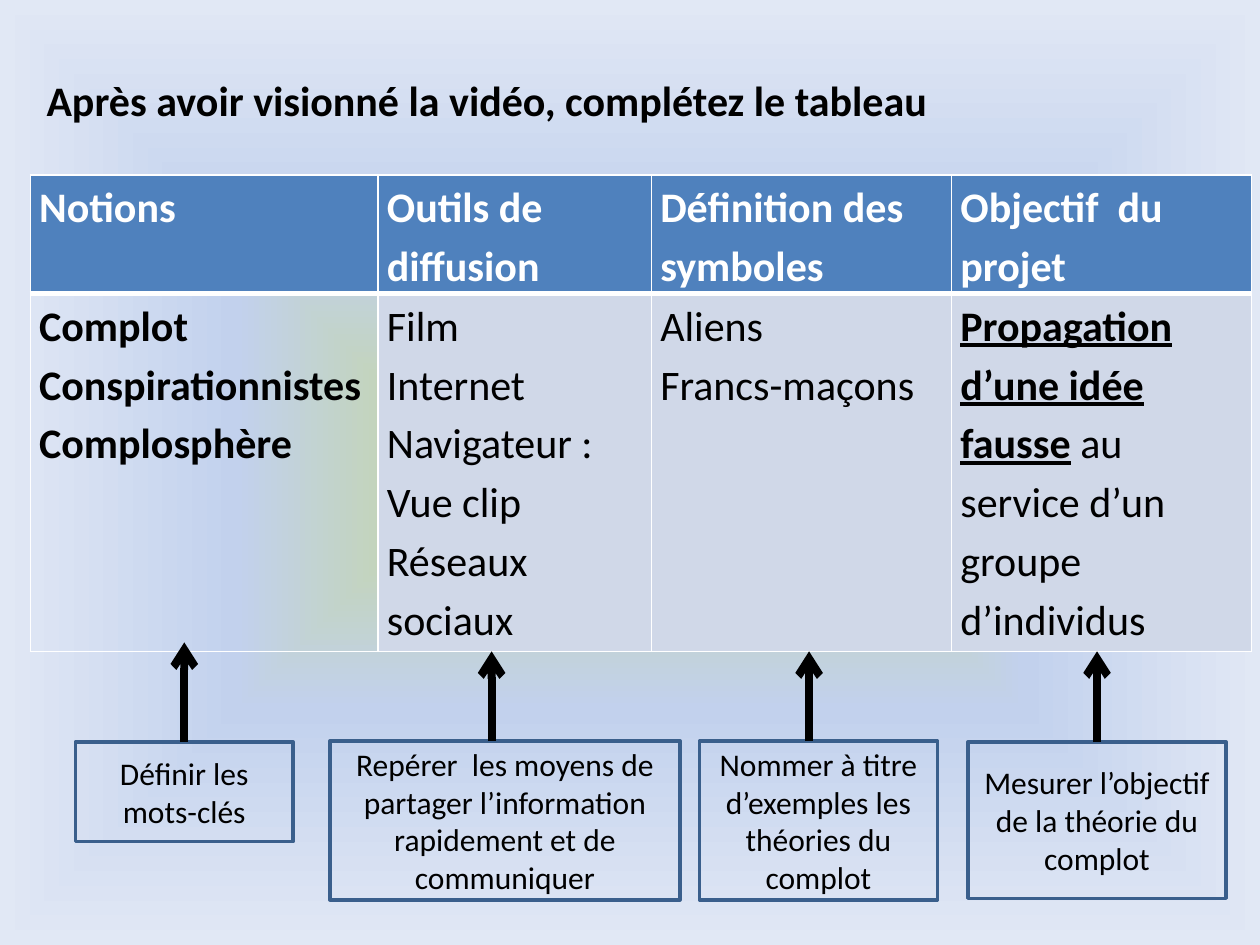
from dataclasses import dataclass
from pptx import Presentation
from pptx.dml.color import RGBColor
from pptx.enum.shapes import MSO_CONNECTOR as Link, MSO_SHAPE as Form
from pptx.enum.text import MSO_ANCHOR as Anchor, PP_ALIGN as Align
from pptx.oxml import parse_xml as build
from pptx.oxml.ns import nsdecls, qn
from pptx.util import Cm, Pt

BLACK, WHITE = "000000", "FFFFFF"
HEAD, BODY, EDGE = "4F81BD", "D0D8E8", "3A5F8C"


@dataclass
class Note:
    words: str
    left: float
    top: float
    width: float
    height: float
    tip: float
    shift: float = 0


@dataclass
class Column:
    title: str
    width: float
    lines: list[str]
    bold: bool = False
    fill: str | None = BODY
    mark: str = ""


COLUMNS = [
    Column("Notions", 7.01, ["Complot", "Conspirationnistes", "Complosphère"], bold=True, fill=None),
    Column("Outils de diffusion", 5.51, ["Film", "Internet", "Navigateur : Vue clip", "Réseaux sociaux"]),
    Column("Définition des symboles", 6.05, ["Aliens", "Francs-maçons"]),
    Column("Objectif  du projet", 6.05, [" au service d’un groupe d’individus"],
           mark="Propagation d’une idée fausse"),
]

NOTES = [
    Note("Définir les mots-clés", 1.52, 14.96, 4.39, 2.01, 12.95),
    Note("Repérer  les moyens de partager l’information rapidement et de communiquer",
         6.65, 14.94, 7.06, 3.2, 13.13, -0.27),
    Note("Nommer à titre d’exemples les théories du complot", 14.1, 14.94, 4.8, 3.2, 13.13, -0.19),
    Note("Mesurer l’objectif de la théorie du complot", 19.51, 14.96, 5.21, 3.15, 13.13),
]


def color(code: str) -> RGBColor:
    return RGBColor.from_string(code)


def write(frame, lines: list[str], *, size=24, ink=BLACK, bold=False,
          lead=None, align=None, mark="") -> None:
    frame.word_wrap = True
    for i, line in enumerate(lines):
        para = frame.paragraphs[0] if i == 0 else frame.add_paragraph()
        para.alignment, para.line_spacing = align, lead
        parts = [(line, False)]
        if mark and i == 0:
            parts.insert(0, (mark, True))
        for words, strong in parts:
            run = para.add_run()
            run.text = words
            font = run.font
            font.name, font.size, font.color.rgb = "Calibri", Pt(size), color(ink)
            font.bold, font.underline = bold or strong, strong


def backdrop(slide) -> None:
    slide.background.fill.gradient()
    old = slide.element.find(".//" + qn("a:gradFill"))
    stops = "".join(
        f'<a:gs pos="{pos * 1000}"><a:srgbClr val="{code}"/></a:gs>'
        for pos, code in ((0, "C3D69B"), (50, "C2D1ED"), (100, "E1E8F5")))
    old.getparent().replace(old, build(
        f'<a:gradFill {nsdecls("a")} rotWithShape="1"><a:gsLst>{stops}</a:gsLst>'
        '<a:path path="shape"><a:fillToRect l="50000" t="50000" r="50000" b="50000"/>'
        '</a:path></a:gradFill>'))


def border(cell, **widths: float) -> None:
    props = cell._tc.get_or_add_tcPr()
    for i, side in enumerate("LRTB"):
        props.insert(i, build(
            f'<a:ln{side} {nsdecls("a")} w="{Pt(widths.get(side, 1))}"><a:solidFill>'
            f'<a:srgbClr val="{WHITE}"/></a:solidFill></a:ln{side}>'))


def fill_cell(cell, lines: list[str], fill: str | None, **style) -> None:
    cell.margin_left = cell.margin_right = Cm(0.18)
    cell.margin_top = cell.margin_bottom = 0
    if fill:
        cell.fill.solid()
        cell.fill.fore_color.rgb = color(fill)
    else:
        cell.fill.background()
    write(cell.text_frame, lines, lead=1.15, **style)


def draw_table(slide) -> None:
    total = sum(col.width for col in COLUMNS)
    grid = slide.shapes.add_table(2, len(COLUMNS), Cm(0.61), Cm(3.53), Cm(total), Cm(9.6)).table
    grid.rows[0].height, grid.rows[1].height = Cm(2.39), Cm(7.21)
    for i, col in enumerate(COLUMNS):
        grid.columns[i].width = Cm(col.width)
        head, body = grid.cell(0, i), grid.cell(1, i)
        fill_cell(head, [col.title], HEAD, ink=WHITE, bold=True)
        fill_cell(body, col.lines, col.fill, bold=col.bold, mark=col.mark)
        border(head, B=3)
        border(body, T=3)


def draw_note(slide, note: Note) -> None:
    box = slide.shapes.add_shape(Form.RECTANGLE, Cm(note.left), Cm(note.top),
                                 Cm(note.width), Cm(note.height))
    box.shadow.inherit = False
    box.fill.background()
    box.line.color.rgb, box.line.width = color(EDGE), Pt(2)
    box.text_frame.vertical_anchor = Anchor.MIDDLE
    write(box.text_frame, [note.words], size=18, align=Align.CENTER)

    mid = Cm(note.left + note.width / 2 + note.shift)
    arrow = slide.shapes.add_connector(Link.STRAIGHT, mid, Cm(note.top), mid, Cm(note.tip))
    if not note.shift:
        arrow.begin_connect(box, 0)
    arrow.line.color.rgb, arrow.line.width = color(BLACK), Pt(4.5)
    arrow.line._get_or_add_ln().append(build(f'<a:tailEnd {nsdecls("a")} type="arrow"/>'))
    arrow._element.spPr.append(build(f'<a:effectLst {nsdecls("a")}/>'))


def main() -> None:
    deck = Presentation()
    deck.slide_width, deck.slide_height = Cm(25.4), Cm(19.05)
    slide = deck.slides.add_slide(deck.slide_layouts[6])
    backdrop(slide)
    title = slide.shapes.add_textbox(Cm(0.69), Cm(1.37), Cm(22.4), Cm(1.27))
    write(title.text_frame, ["Après avoir visionné la vidéo, complétez le tableau"], bold=True)
    draw_table(slide)
    for note in NOTES:
        draw_note(slide, note)
    deck.save("out.pptx")


if __name__ == "__main__":
    main()
